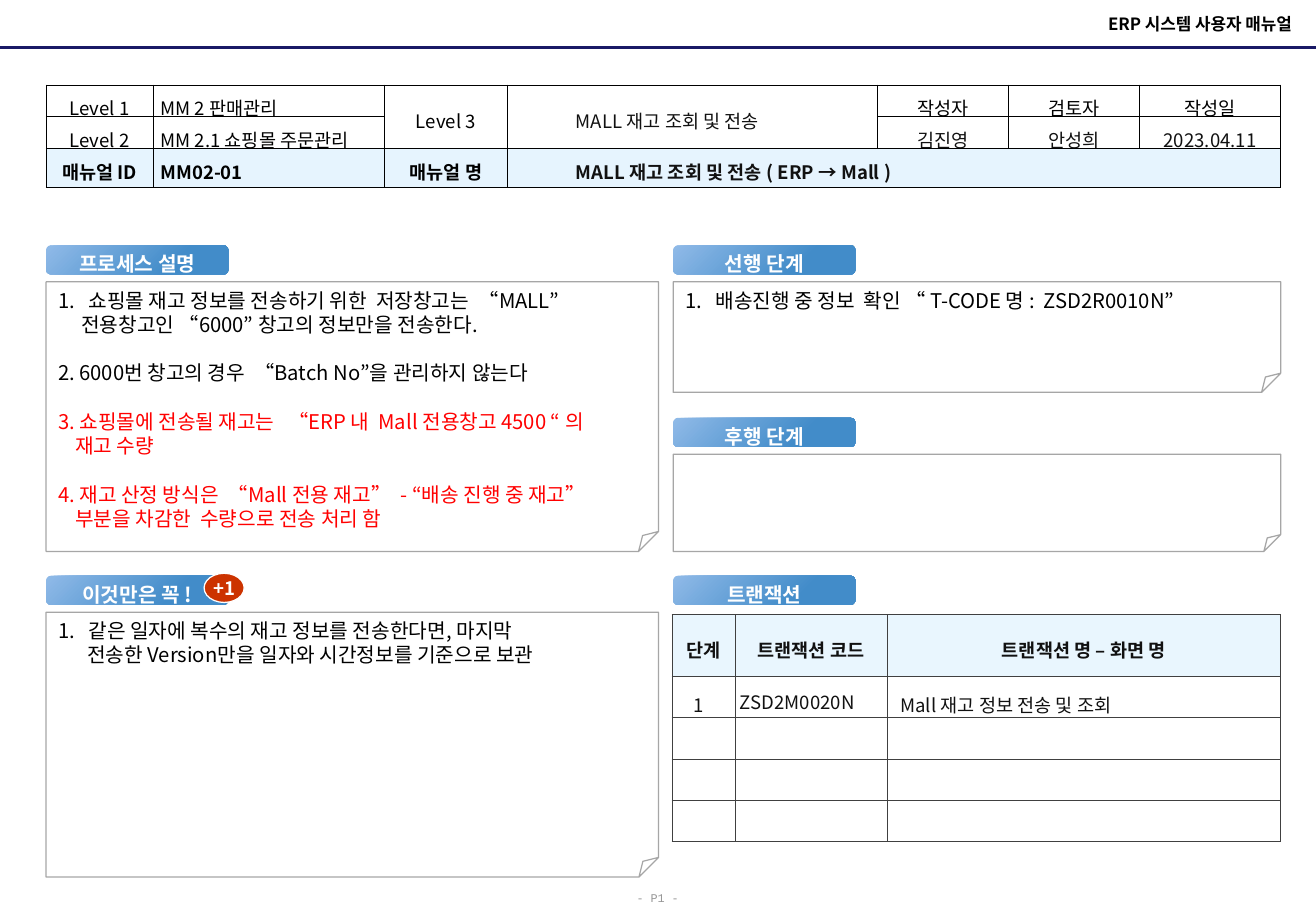
"""Build the ERP user manual page for sending mall stock information."""
from lxml import etree
from pptx import Presentation
from pptx import util as u
from pptx.dml import color
from pptx.enum import shapes, text
from pptx.oxml import ns

COLORS = {"black": "000000", "ink": "111111", "white": "FFFFFF", "red": "FF0000", "grey": "969696",
          "outline": "A6A6A6", "grid": "404040", "navy": "191966", "badge": "CC3300",
          "id_row": "E6F4FE", "head_row": "E9F6FE", "label_start": "90BAE8", "label_end": "428CC9"}
FONT = "Noto Sans CJK KR"
LEFT, CENTER, RIGHT = text.PP_ALIGN.LEFT, text.PP_ALIGN.CENTER, text.PP_ALIGN.RIGHT
MIDDLE = text.MSO_ANCHOR.MIDDLE


def write(para, words, size, ink="black", bold=False, align=LEFT, spacing=1.0, indent=0, font=FONT):
    """Fill one paragraph and format its run."""
    para.text = words
    para.alignment = align
    para.line_spacing = spacing
    if indent:
        para._p.get_or_add_pPr().set("marL", str(u.Inches(indent)))
    for span in para.runs:
        span.font.name, span.font.size, span.font.bold = font, u.Pt(size), bold
        span.font.color.rgb = color.RGBColor.from_string(COLORS[ink])
        etree.SubElement(span._r.get_or_add_rPr(), ns.qn("a:ea"), typeface=font)
    if not para.runs:
        etree.SubElement(para._p, ns.qn("a:endParaRPr"), sz=str(size * 100))


def make_table(left, top, widths, heights, border, margins):
    """Add a plain table with thin borders on every cell."""
    grid = page.shapes.add_table(len(heights), len(widths), u.Inches(left), u.Inches(top),
                                 u.Inches(sum(widths)), u.Inches(sum(heights))).table
    grid.first_row = grid.horz_banding = False
    for column, width in zip(grid.columns, widths):
        column.width = u.Inches(width)
    for row, height in zip(grid.rows, heights):
        row.height = u.Inches(height)
    for cell in grid.iter_cells():
        cell.margin_left = cell.margin_right = u.Inches(margins[0])
        cell.margin_top = cell.margin_bottom = u.Inches(margins[1])
        cell.vertical_anchor = MIDDLE
        for side in ("lnL", "lnR", "lnT", "lnB"):
            edge = etree.SubElement(cell._tc.get_or_add_tcPr(), ns.qn(f"a:{side}"), w=str(u.Pt(0.5)))
            solid = etree.SubElement(edge, ns.qn("a:solidFill"))
            etree.SubElement(solid, ns.qn("a:srgbClr"), val=COLORS[border])
        cell.fill.solid()
        cell.fill.fore_color.rgb = color.RGBColor.from_string(COLORS["white"])
    return grid


deck = Presentation()
deck.slide_width, deck.slide_height = u.Inches(10.83), u.Inches(7.5)
page = deck.slides.add_slide(deck.slide_layouts[5])

title = page.shapes.title
title.left, title.top, title.width, title.height = map(u.Inches, (6.04, 0.06, 4.69, 0.27))
title.text_frame.vertical_anchor = MIDDLE
write(title.text_frame.paragraphs[0], "ERP 시스템 사용자 매뉴얼", 10, bold=True, align=RIGHT)

rule = page.shapes.add_connector(shapes.MSO_CONNECTOR.STRAIGHT, 0, u.Inches(0.39),
                                 deck.slide_width, u.Inches(0.39))
rule.line.color.rgb = color.RGBColor.from_string(COLORS["navy"])
rule.line.width = u.Pt(1.5)
etree.SubElement(rule._element.spPr, ns.qn("a:effectLst"))

footer = page.shapes.add_textbox(*map(u.Inches, (5.14, 7.25, 0.56, 0.25)))
footer.text_frame.word_wrap = False
write(footer.text_frame.paragraphs[0], "- P1 -", 7, "grey", spacing=1.3, font="Courier New")

manual = make_table(0.38, 0.7, (0.88, 1.9, 1.02, 3.04, 1.08, 1.08, 1.16), (0.26, 0.26, 0.32),
                    "black", (0.06, 0.01))
manual.cell(0, 2).merge(manual.cell(1, 2))
manual.cell(0, 3).merge(manual.cell(1, 3))
manual.cell(2, 3).merge(manual.cell(2, 6))
manual_rows = [
    ["Level 1", "MM 2 판매관리", "Level 3", "MALL 재고 조회 및 전송", "작성자", "검토자", "작성일"],
    ["Level 2", "MM 2.1 쇼핑몰 주문관리", "", "", "김진영", "안성희", "2023.04.11"],
    ["매뉴얼 ID", "MM02-01", "매뉴얼 명", "MALL 재고 조회 및 전송 ( ERP → Mall )", "", "", ""],
]
for r, row in enumerate(manual_rows):
    for c, words in enumerate(row):
        cell = manual.cell(r, c)
        if r == 2:
            cell.fill.fore_color.rgb = color.RGBColor.from_string(COLORS["id_row"])
        ink = "ink" if c == 3 or (r == 1 and c > 3) else "black"
        write(cell.text_frame.paragraphs[0], words, 11, ink, bold=r == 2,
              align=LEFT if c in (1, 3) else CENTER, spacing=1.3, indent=0.5 if c == 3 else 0)

transactions = make_table(5.53, 5.06, (0.52, 1.25, 3.24), (0.51, 0.34, 0.34, 0.34, 0.34),
                          "grid", (0.11, 0.05))
transaction_rows = [["단계", "트랜잭션 코드", "트랜잭션 명 – 화면 명"],
                    ["1", "ZSD2M0020N", "Mall 재고 정보 전송 및 조회"]] + [[""] * 3] * 3
for r, row in enumerate(transaction_rows):
    for c, words in enumerate(row):
        cell = transactions.cell(r, c)
        if r == 0:
            cell.fill.fore_color.rgb = color.RGBColor.from_string(COLORS["head_row"])
        write(cell.text_frame.paragraphs[0], words, 11, "ink", bold=r == 0,
              align=LEFT if r else CENTER, spacing=1.3 if words else 1.0,
              indent=0.07 if words == "1" else 0)
code = transactions.cell(1, 1)
code.margin_left, code.margin_right, code.margin_top, code.margin_bottom = u.Inches(0.04), 0, 0, 0

labels = [(0.38, 2.02, "프로세스 설명"), (5.54, 2.02, "선행 단계"), (5.54, 3.44, "후행 단계"),
          (5.54, 4.74, "트랜잭션"), (0.38, 4.74, "이것만은 꼭 !")]
for left, top, words in labels:
    label = page.shapes.add_shape(shapes.MSO_SHAPE.ROUNDED_RECTANGLE,
                                  *map(u.Inches, (left, top, 1.5, 0.24)))
    label.shadow.inherit = False
    label.line.fill.background()
    label.fill.gradient()
    label.fill.gradient_angle = 315
    for stop, position, name in zip(label.fill.gradient_stops, (0, 0.7), ("label_start", "label_end")):
        stop.position = position
        stop.color.rgb = color.RGBColor.from_string(COLORS[name])
    frame = label.text_frame
    frame.margin_left = frame.margin_right = frame.margin_top = 0
    frame.margin_bottom = u.Inches(0.04)
    frame.vertical_anchor = MIDDLE
    write(frame.paragraphs[0], words, 12, "white", bold=True, align=CENTER, spacing=1.5)

process = [
    ("쇼핑몰 재고 정보를 전송하기 위한  저장창고는  “MALL”", "black", 0.25, 0),
    ("전용창고인 “6000” 창고의 정보만을 전송한다.", "black", 0.19, 0),
    ("2. 6000번 창고의 경우  “Batch No”을 관리하지 않는다", "black", 0, 14.4),
    ("3. 쇼핑몰에 전송될 재고는   “ERP 내  Mall 전용창고 4500 “ 의", "red", 0, 14.4),
    ("재고 수량", "red", 0.14, 0),
    ("4. 재고 산정 방식은  “Mall 전용 재고”  - “배송 진행 중 재고”", "red", 0, 14.4),
    ("부분을 차감한  수량으로 전송 처리 함", "red", 0.14, 0),
]
before = [("배송진행 중 정보  확인 “ T-CODE 명 :  ZSD2R0010N”", "black", 0.25, 0)]
must_know = [("같은 일자에 복수의 재고 정보를 전송한다면, 마지막", "black", 0.25, 0),
             ("전송한 Version만을 일자와 시간정보를 기준으로 보관", "black", 0.24, 0)]
notes = [(0.38, 2.32, 5.04, 2.22, 7400, process), (5.54, 2.32, 5, 0.91, 17300, before),
         (5.54, 3.74, 5, 0.8, 17300, []), (0.38, 5.04, 5.04, 2.18, 7400, must_know)]
for left, top, width, height, fold, lines in notes:
    note = page.shapes.add_shape(shapes.MSO_SHAPE.FOLDED_CORNER,
                                 *map(u.Inches, (left, top, width, height)))
    guides = note._element.spPr.find(ns.qn("a:prstGeom")).find(ns.qn("a:avLst"))
    etree.SubElement(guides, ns.qn("a:gd"), name="adj", fmla=f"val {fold}")
    note.shadow.inherit = False
    note.fill.background()
    note.line.color.rgb = color.RGBColor.from_string(COLORS["outline"])
    note.line.width = u.Pt(0.75)
    frame = note.text_frame
    frame.vertical_anchor = text.MSO_ANCHOR.TOP
    for i, (words, ink, indent, gap) in enumerate(lines):
        para = frame.add_paragraph() if i else frame.paragraphs[0]
        write(para, words, 12, ink, indent=indent)
        if gap:
            para.space_before = u.Pt(gap)
        if i == 0:
            props = para._p.get_or_add_pPr()
            props.set("indent", str(-u.Inches(indent)))
            etree.SubElement(props, ns.qn("a:buFont"), typeface="+mj-lt")
            etree.SubElement(props, ns.qn("a:buAutoNum"), type="arabicPeriod")

badge = page.shapes.add_shape(shapes.MSO_SHAPE.OVAL, *map(u.Inches, (1.68, 4.72, 0.33, 0.24)))
badge.shadow.inherit = False
badge.fill.solid()
badge.fill.fore_color.rgb = color.RGBColor.from_string(COLORS["badge"])
badge.line.color.rgb = color.RGBColor.from_string(COLORS["white"])
badge.line.width = u.Pt(0.75)
badge.text_frame.word_wrap = False
badge.text_frame.vertical_anchor = MIDDLE
write(badge.text_frame.paragraphs[0], "+1", 11, "white", bold=True, align=CENTER)

deck.save("out.pptx")
